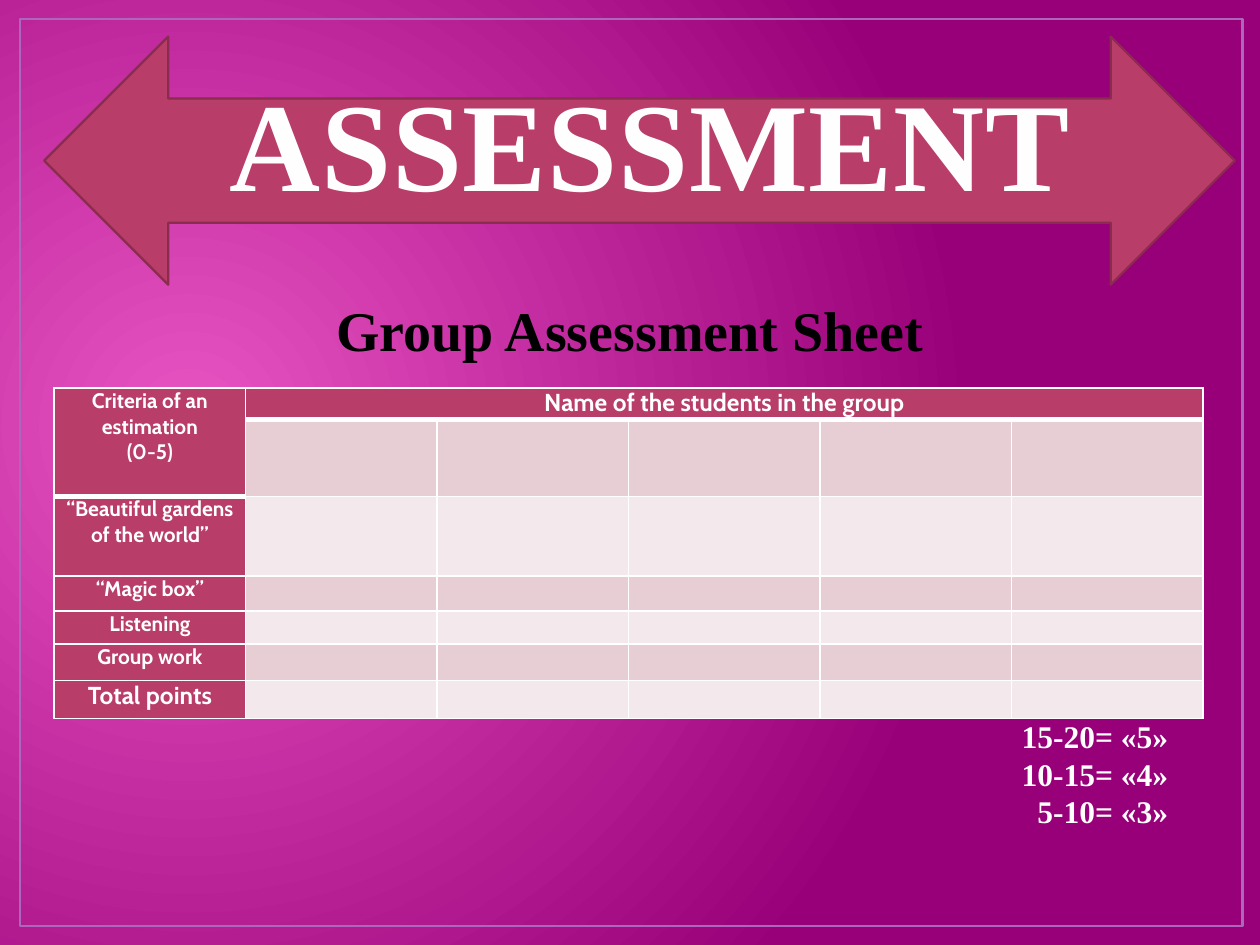
from dataclasses import dataclass

from lxml import etree
from pptx import Presentation
from pptx.dml.color import RGBColor
from pptx.enum import shapes, text
from pptx.oxml import parse_xml
from pptx.oxml.ns import nsdecls, qn
from pptx.util import Inches, Pt

COLORS = {
    "glow": "E954C3", "purple": "980079", "frame": "AC66BB",
    "rose": "B83D68", "rose_edge": "882D4D", "title": "FFFEFE",
    "title_edge": "5C1F34", "white": "FFFFFF", "black": "000000",
    "band_dark": "E6CED4", "band_light": "F3E8EB",
}
SERIF, SANS = "Times New Roman", "Cabin"
CENTER, RIGHT = text.PP_ALIGN.CENTER, text.PP_ALIGN.RIGHT


@dataclass
class Box:
    left: float
    top: float
    width: float
    height: float

    def lengths(self) -> list:
        return [Inches(v) for v in (self.left, self.top, self.width, self.height)]


@dataclass
class Style:
    size: float
    color: str
    font: str = SERIF
    align: text.PP_ALIGN = CENTER


@dataclass
class TableRow:
    height: float
    label: str = ""
    size: float = 12


ROWS = [
    TableRow(0.25, "Criteria of an estimation\n(0-5)"),
    TableRow(0.61),
    TableRow(0.63, "“Beautiful gardens of the world”"),
    TableRow(0.28, "“Magic box”"),
    TableRow(0.26, "Listening"),
    TableRow(0.29, "Group work"),
    TableRow(0.3, "Total points", 14),
]
COLUMN_COUNT, COLUMN_WIDTH = 6, 1.52


def rgb(name: str) -> RGBColor:
    return RGBColor.from_string(COLORS[name])


def write(frame, content: str, style: Style) -> None:
    frame.text = content
    frame.word_wrap = True
    for paragraph in frame.paragraphs:
        paragraph.alignment = style.align
        for run in paragraph.runs:
            run.font.name = style.font
            run.font.size = Pt(style.size)
            run.font.bold = True
            run.font.color.rgb = rgb(style.color)


def add_outline(parent, tag: str, color: str, points: float, index: int) -> None:
    line = parse_xml(
        f'<a:{tag} {nsdecls("a")} w="{Pt(points)}"><a:solidFill>'
        f'<a:srgbClr val="{COLORS[color]}"/></a:solidFill></a:{tag}>')
    parent.insert(index, line)


def set_background(slide) -> None:
    fill = slide.background.fill
    fill.gradient()
    for stop, color in zip(fill.gradient_stops, ("glow", "purple")):
        stop.color.rgb = rgb(color)
    gradient = slide.background._cSld.find(".//" + qn("a:gradFill"))
    linear = gradient.find(qn("a:lin"))
    if linear is not None:
        gradient.remove(linear)
    stops = gradient.find(qn("a:gsLst"))
    for stop, position in zip(stops, ("0", "100000")):
        stop.set("pos", position)
    stops.addnext(parse_xml(
        f'<a:path {nsdecls("a")} path="circle">'
        '<a:fillToRect l="15000" t="50000" r="85000" b="60000"/></a:path>'))


def add_preset(slide, kind, box: Box, line: str, points: float, fill: str = ""):
    shape = slide.shapes.add_shape(kind, *box.lengths())
    shape.shadow.inherit = False
    if fill:
        shape.fill.solid()
        shape.fill.fore_color.rgb = rgb(fill)
    else:
        shape.fill.background()
    shape.line.color.rgb = rgb(line)
    shape.line.width = Pt(points)
    return shape


def add_label(slide, box: Box, content: str, style: Style, anchor) -> None:
    frame = slide.shapes.add_textbox(*box.lengths()).text_frame
    write(frame, content, style)
    frame.vertical_anchor = anchor
    frame.auto_size = text.MSO_AUTO_SIZE.SHAPE_TO_FIT_TEXT


def format_cell(cell, row: int, column: int) -> None:
    # Fill
    band = "band_light" if row % 2 == 0 else "band_dark"
    cell.fill.solid()
    cell.fill.fore_color.rgb = rgb("rose" if row == 0 or column == 0 else band)
    cell.margin_left = cell.margin_right = Inches(0.07)
    cell.margin_top = cell.margin_bottom = 0

    # Borders, thick below the header cells
    last_header = 1 if column == 0 else 0
    widths = {
        "lnL": 1, "lnR": 1,
        "lnT": 3 if row == last_header + 1 else 1,
        "lnB": 3 if row <= last_header else 1,
    }
    properties = cell._tc.get_or_add_tcPr()
    for index, (tag, points) in enumerate(widths.items()):
        add_outline(properties, tag, "white", points, index)

    # Small type keeps empty cells from stretching their row
    if not cell.text_frame.text:
        paragraph = cell.text_frame.paragraphs[0]._p
        etree.SubElement(paragraph, qn("a:endParaRPr")).set("sz", "1000")


def add_assessment_table(slide) -> None:
    box = Box(0.43, 3.08, COLUMN_COUNT * COLUMN_WIDTH, sum(r.height for r in ROWS))
    table = slide.shapes.add_table(len(ROWS), COLUMN_COUNT, *box.lengths()).table
    table.first_row = table.horz_banding = False
    for column in table.columns:
        column.width = Inches(COLUMN_WIDTH)
    for index, row in enumerate(ROWS):
        table.rows[index].height = Inches(row.height)
        if row.label:
            style = Style(row.size, "white", SANS)
            write(table.cell(index, 0).text_frame, row.label, style)
    write(table.cell(0, 1).text_frame, "Name of the students in the group",
          Style(14, "white", SANS))
    for row in range(len(ROWS)):
        for column in range(COLUMN_COUNT):
            format_cell(table.cell(row, column), row, column)
    table.cell(0, 0).merge(table.cell(1, 0))
    table.cell(0, 1).merge(table.cell(0, COLUMN_COUNT - 1))


def place_title(slide) -> None:
    title = slide.shapes.title
    title.left, title.top, title.width, title.height = Box(1.3, 0.99, 7.72, 0.78).lengths()
    frame = title.text_frame
    write(frame, "ASSESSMENT", Style(72, "title"))
    frame.vertical_anchor = text.MSO_ANCHOR.BOTTOM
    frame.auto_size = text.MSO_AUTO_SIZE.NONE
    properties = frame.paragraphs[0].runs[0].font._element
    properties.set("spc", "50")
    add_outline(properties, "ln", "title_edge", 1.05, 0)
    # Bring the title in front of the arrow
    slide.shapes._spTree.append(title._element)


def main() -> None:
    presentation = Presentation()
    presentation.slide_width, presentation.slide_height = Inches(10), Inches(7.5)
    slide = presentation.slides.add_slide(presentation.slide_layouts[5])
    set_background(slide)

    # Frame and title arrow
    add_preset(slide, shapes.MSO_SHAPE.RECTANGLE, Box(0.16, 0.15, 9.7, 7.2), "frame", 1.5)
    add_preset(slide, shapes.MSO_SHAPE.LEFT_RIGHT_ARROW, Box(0.35, 0.29, 9.45, 1.97),
               "rose_edge", 1.25, "rose")
    place_title(slide)

    # Assessment sheet and grading scale
    add_assessment_table(slide)
    add_label(slide, Box(1.77, 2.29, 6.46, 0.64), "Group Assessment Sheet",
              Style(32, "black"), text.MSO_ANCHOR.MIDDLE)
    add_label(slide, Box(4.37, 5.64, 5, 1.01), "15-20= «5»\n10-15= «4»\n5-10= «3»",
              Style(18, "white", align=RIGHT), text.MSO_ANCHOR.TOP)
    presentation.save("out.pptx")


if __name__ == "__main__":
    main()
